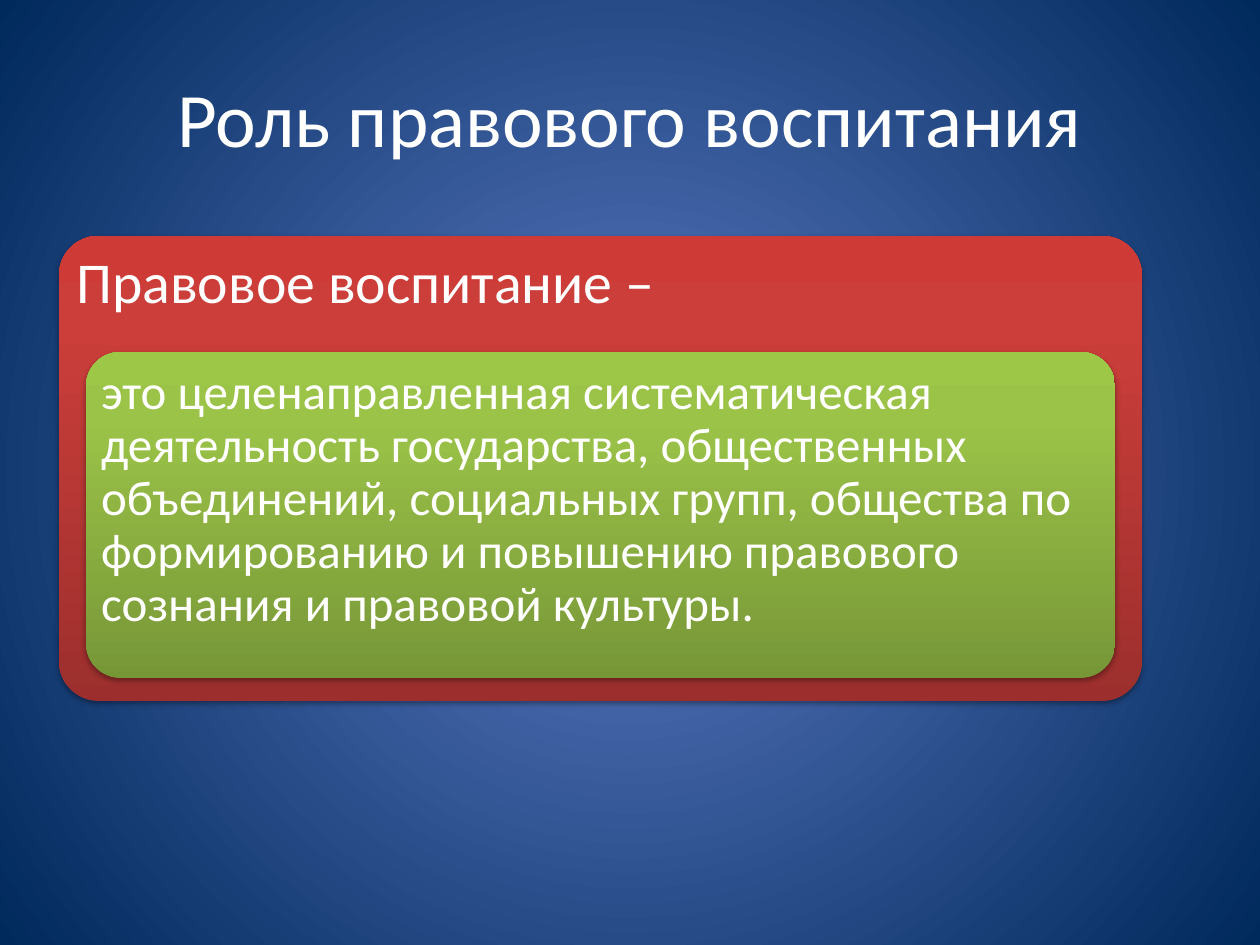
from dataclasses import dataclass
from pptx import Presentation
from pptx import util as u
from pptx.dml.color import RGBColor
from pptx.enum import shapes, text
from pptx.oxml import parse_xml
from pptx.oxml.ns import nsdecls, qn


@dataclass(frozen=True)
class Theme:
    font: str = "Calibri"
    ink: str = "FFFFFF"
    shade: str = "000000"
    back: tuple = ((0, "5E7CC5"), (100, "00295C"))
    red: tuple = ((0, "9C2F2D"), (80, "CB3E3A"), (100, "CE3B37"))
    green: tuple = ((0, "779737"), (80, "9BC348"), (100, "9DC746"))
    title: int = 44
    head: int = 33
    body: int = 28


theme = Theme()
SCALE = 914400 / 126


def blend(props, stops, course):
    marks = "".join(
        f'<a:gs pos="{pos * 1000}"><a:srgbClr val="{tint}"/></a:gs>'
        for pos, tint in stops)
    fill = parse_xml(f'<a:gradFill {nsdecls("a")} rotWithShape="1">'
                     f'<a:gsLst>{marks}</a:gsLst>{course}</a:gradFill>')
    props.replace(props.find(qn("a:gradFill")), fill)


def style(shape, box, words, size, align):
    shape.left, shape.top, shape.width, shape.height = (
        round(n * SCALE) for n in box)
    frame = shape.text_frame
    frame.text = words
    frame.word_wrap = True
    para = frame.paragraphs[0]
    para.alignment = align
    font = para.runs[0].font
    font.name = theme.font
    font.size = u.Pt(size)
    font.color.rgb = RGBColor.from_string(theme.ink)
    return frame


deck = Presentation()
deck.slide_width = u.Inches(10)
deck.slide_height = u.Inches(7.5)
slide = deck.slides.add_slide(deck.slide_layouts[5])

slide.background.fill.gradient()
blend(slide.element.cSld.bg.bgPr, theme.back,
      '<a:path path="circle"><a:fillToRect l="50000" t="50000" '
      'r="50000" b="50000"/></a:path>')

frame = style(slide.shapes.title, (63, 38, 1134, 157),
              "Роль правового воспитания", theme.title, text.PP_ALIGN.CENTER)
frame.vertical_anchor = text.MSO_ANCHOR.MIDDLE

panels = (
    ((59, 236, 1083, 465), 0.085, theme.red, theme.head, 6,
     "Правовое воспитание –"),
    ((86, 352, 1029, 326), 0.105, theme.green, theme.body, 5,
     "это целенаправленная систематическая деятельность государства, "
     "общественных объединений, социальных групп, общества по формированию "
     "и повышению правового сознания и правовой культуры."),
)
for box, curve, stops, size, inset, words in panels:
    panel = slide.shapes.add_shape(
        shapes.MSO_SHAPE.ROUNDED_RECTANGLE, 0, 0, 0, 0)
    panel.adjustments[0] = curve
    frame = style(panel, box, words, size, text.PP_ALIGN.LEFT)
    frame.vertical_anchor = text.MSO_ANCHOR.TOP
    frame.margin_left = frame.margin_right = round(inset * SCALE)
    frame.margin_top = frame.margin_bottom = round(inset * SCALE)
    frame.paragraphs[0].line_spacing = 0.9
    panel.line.fill.background()
    panel.fill.gradient()
    props = panel.element.spPr
    blend(props, stops, '<a:lin ang="16200000" scaled="0"/>')
    props.append(parse_xml(
        f'<a:effectLst {nsdecls("a")}><a:outerShdw blurRad="{u.Pt(3.1)}" '
        f'dist="{u.Pt(1.8)}" dir="5400000" rotWithShape="0">'
        f'<a:srgbClr val="{theme.shade}"><a:alpha val="35000"/></a:srgbClr>'
        '</a:outerShdw></a:effectLst>'))

deck.save("out.pptx")
